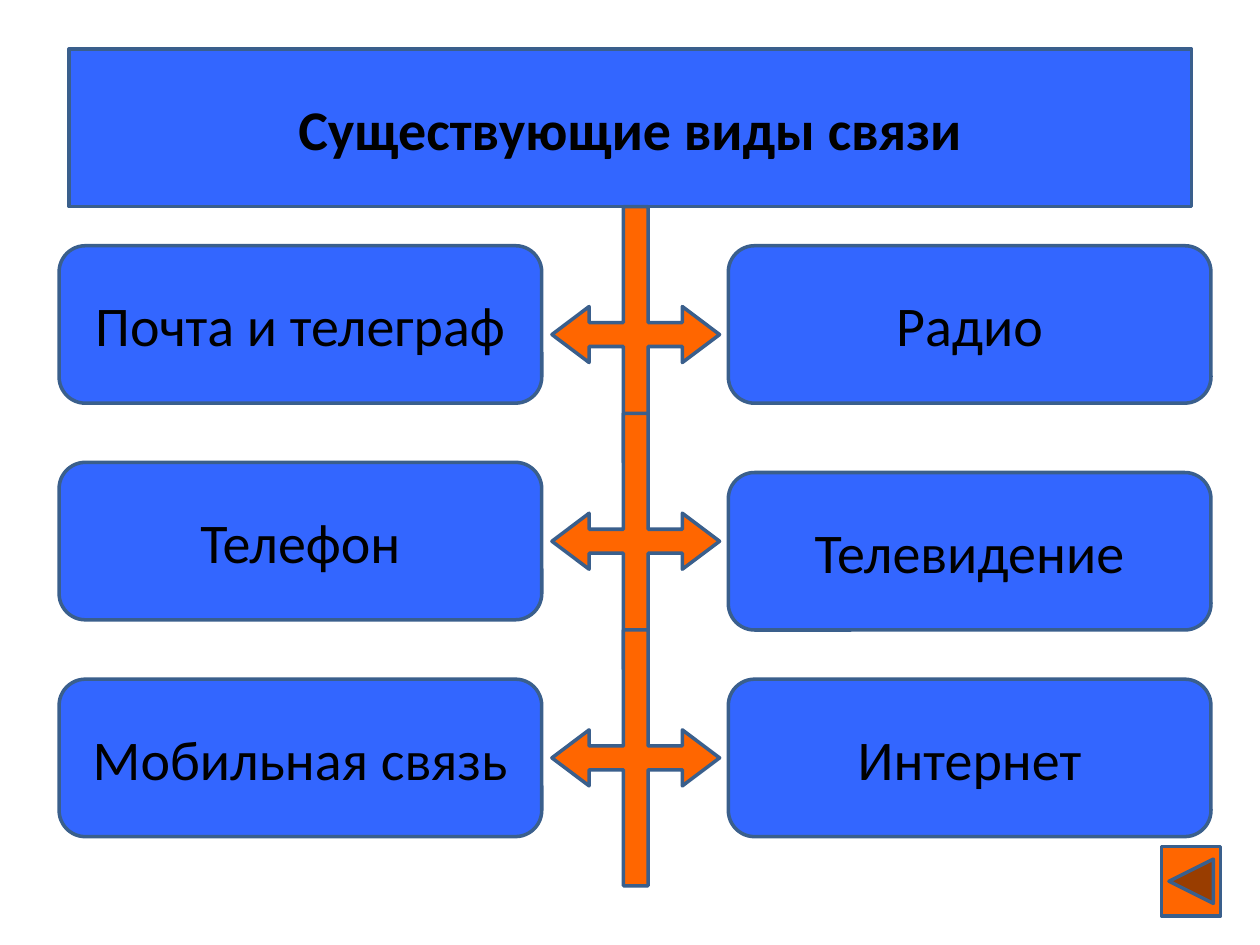
from lxml import etree
from pptx import Presentation
from pptx.dml.color import RGBColor
from pptx.enum.shapes import MSO_SHAPE
from pptx.enum.text import MSO_ANCHOR, PP_ALIGN
from pptx.oxml.ns import qn
from pptx.util import Pt

BLUE = RGBColor(0x33, 0x66, 0xFF)
ORANGE = RGBColor(0xFF, 0x66, 0x00)
EDGE = RGBColor(0x3A, 0x5F, 0x8C)
BLACK = RGBColor(0, 0, 0)

ROUND = MSO_SHAPE.ROUNDED_RECTANGLE
ARROWS = MSO_SHAPE.LEFT_RIGHT_ARROW_CALLOUT
BACK = MSO_SHAPE.ACTION_BUTTON_BACK_OR_PREVIOUS
MIDDLE = MSO_ANCHOR.MIDDLE
CENTER = PP_ALIGN.CENTER

TITLE_ONLY = 5
BOX_W, BOX_H = 275.8, 90
LEFT_X, RIGHT_X = 33.8, 416.2
ARROW_X, ARROW_W, ARROW_H = 315.4, 95.8, 146.2
ARROW_ADJ = (0.143, 0.167, 0.222, 0.147)

COLUMNS = [
    (LEFT_X, [("Почта и телеграф", 140.4), ("Телефон", 264.2),
              ("Мобильная связь", 388.1)]),
    (RIGHT_X, [("Радио", 140.4), ("Телевидение", 270), ("Интернет", 388.1)]),
]
ARROW_TOPS = (118.1, 236.2, 360)


class Page:
    def __init__(self, slide, font="Calibri", size=32, line=2):
        self.slide = slide
        self.font = font
        self.size = size
        self.line = line

    def paint(self, shape, fill):
        shape.fill.solid()
        shape.fill.fore_color.rgb = fill
        shape.line.color.rgb = EDGE
        shape.line.width = Pt(self.line)

    def label(self, shape, text, bold=False):
        frame = shape.text_frame
        frame.text = text
        frame.word_wrap = True
        frame.vertical_anchor = MIDDLE
        para = frame.paragraphs[0]
        para.alignment = CENTER
        font = para.runs[0].font
        font.name = self.font
        font.size = Pt(self.size)
        font.bold = bold
        font.color.rgb = BLACK

    def title(self, text, x, y, w, h):
        """Turn the title placeholder into a rounded box."""
        shape = self.slide.shapes.title
        shape.left, shape.top = Pt(x), Pt(y)
        shape.width, shape.height = Pt(w), Pt(h)
        geom = etree.SubElement(shape.element.spPr, qn("a:prstGeom"),
                                prst="roundRect")
        etree.SubElement(geom, qn("a:avLst"))
        self.paint(shape, BLUE)
        self.label(shape, text, bold=True)

    def shape(self, kind, x, y, w, h, fill):
        shape = self.slide.shapes.add_shape(kind, Pt(x), Pt(y), Pt(w), Pt(h))
        shape.shadow.inherit = False
        self.paint(shape, fill)
        return shape

    def box(self, text, x, y):
        self.label(self.shape(ROUND, x, y, BOX_W, BOX_H, BLUE), text)

    def arrow(self, y):
        shape = self.shape(ARROWS, ARROW_X, y, ARROW_W, ARROW_H, ORANGE)
        for i, value in enumerate(ARROW_ADJ):
            shape.adjustments[i] = value

    def button(self, x, y, w, h):
        self.shape(BACK, x, y, w, h, ORANGE)


def main():
    deck = Presentation()
    deck.slide_width, deck.slide_height = Pt(720), Pt(540)
    page = Page(deck.slides.add_slide(deck.slide_layouts[TITLE_ONLY]))

    page.title("Существующие виды связи", 39.4, 28.1, 641.5, 90)
    for x, boxes in COLUMNS:
        for text, y in boxes:
            page.box(text, x, y)
    for y in ARROW_TOPS:
        page.arrow(y)
    page.button(663.8, 483.8, 33.8, 39.6)

    deck.save("out.pptx")


if __name__ == "__main__":
    main()
